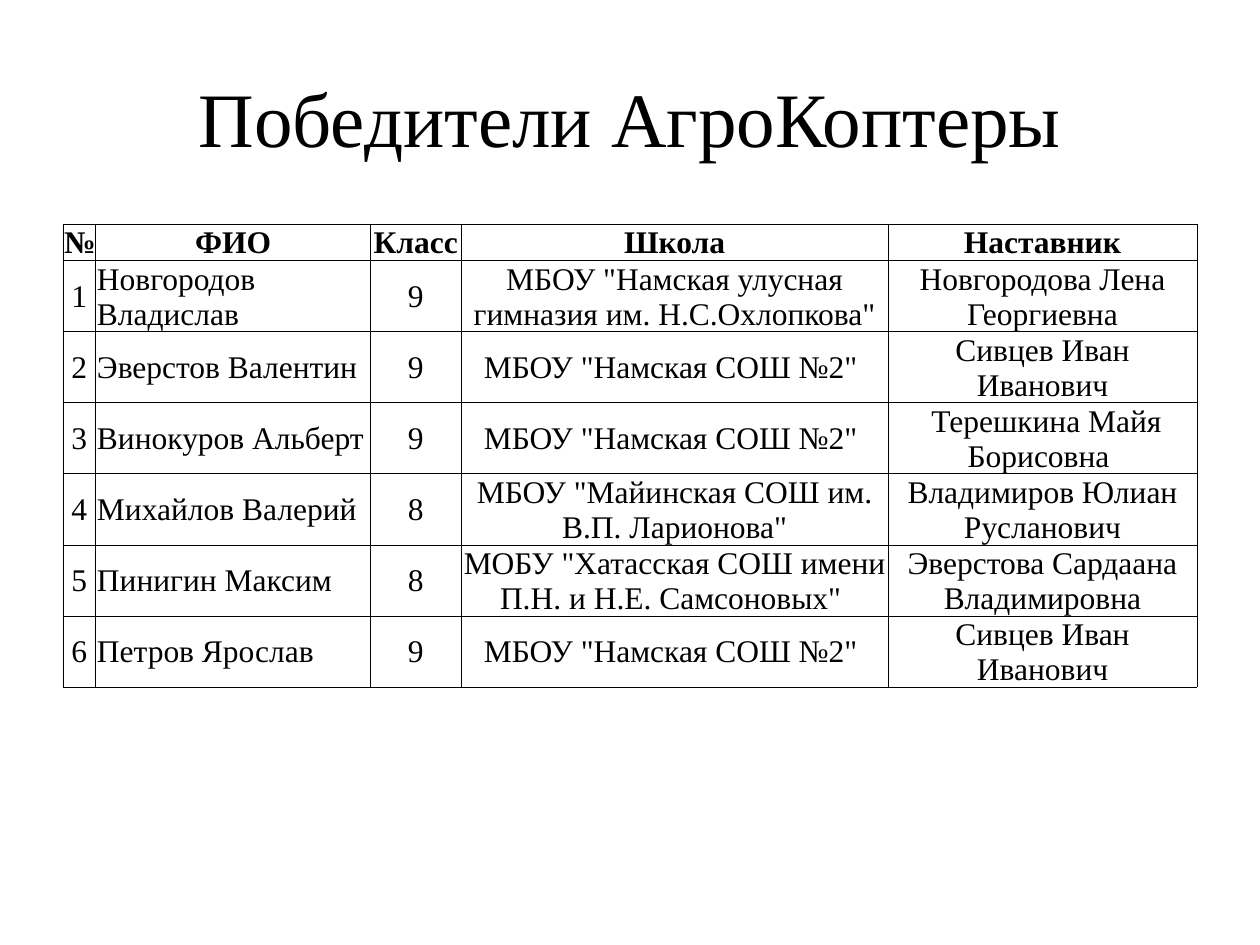
from typing import NamedTuple

from lxml import etree
from pptx import Presentation
from pptx.dml.color import RGBColor
from pptx.enum import text
from pptx.oxml.ns import qn
from pptx.util import Inches, Pt

FONT = "Times New Roman"
BLACK, WHITE = "000000", "FFFFFF"
HEADER_HEIGHT, ROW_HEIGHT = 0.29, 0.56
NAME_COLUMN, MENTOR_COLUMN = 1, 4


class Column(NamedTuple):
    heading: str
    width: float


class Winner(NamedTuple):
    name: str
    grade: int
    school: str
    mentor: str


COLUMNS = [
    Column("№", 0.26),
    Column("ФИО", 2.18),
    Column("Класс", 0.72),
    Column("Школа", 3.39),
    Column("Наставник", 2.45),
]
SCHOOL_2 = 'МБОУ "Намская СОШ №2" '
WINNERS = [
    Winner("Новгородов Владислав", 9,
           'МБОУ "Намская улусная гимназия им. Н.С.Охлопкова"',
           "Новгородова Лена Георгиевна"),
    Winner("Эверстов Валентин", 9, SCHOOL_2, "Сивцев Иван Иванович"),
    Winner("Винокуров Альберт", 9, SCHOOL_2, " Терешкина Майя Борисовна "),
    Winner("Михайлов Валерий", 8, 'МБОУ "Майинская СОШ им. В.П. Ларионова"',
           "Владимиров Юлиан Русланович"),
    Winner("Пинигин Максим", 8,
           'МОБУ "Хатасская СОШ имени П.Н. и Н.Е. Самсоновых" ',
           "Эверстова Сардаана Владимировна"),
    Winner("Петров Ярослав", 9, SCHOOL_2, "Сивцев Иван Иванович"),
]


def color(value: str) -> RGBColor:
    return RGBColor.from_string(value)


def write(frame, words: str, size: int, bold: bool = False,
          align=text.PP_ALIGN.CENTER) -> None:
    para = frame.paragraphs[0]
    para.alignment = align
    span = para.add_run()
    span.text = words
    span.font.name = FONT
    span.font.size = Pt(size)
    span.font.bold = bold
    span.font.color.rgb = color(BLACK)


def add_borders(cell) -> None:
    """Draw thin black lines on all four sides; they must precede the fill."""
    properties = cell._tc.get_or_add_tcPr()
    for index, side in enumerate(("a:lnL", "a:lnR", "a:lnT", "a:lnB")):
        line = etree.Element(qn(side), w=str(Pt(0.5)))
        fill = etree.SubElement(line, qn("a:solidFill"))
        etree.SubElement(fill, qn("a:srgbClr"), val=BLACK)
        properties.insert(index, line)


def format_cell(cell, words: str, header: bool, column: int) -> None:
    cell.margin_left = cell.margin_right = cell.margin_top = Inches(0.01)
    cell.margin_bottom = 0
    top = column == MENTOR_COLUMN and not header
    cell.vertical_anchor = text.MSO_ANCHOR.TOP if top else text.MSO_ANCHOR.MIDDLE
    cell.fill.solid()
    cell.fill.fore_color.rgb = color(WHITE)
    add_borders(cell)
    left = column == NAME_COLUMN and not header
    align = text.PP_ALIGN.LEFT if left else text.PP_ALIGN.CENTER
    write(cell.text_frame, words, 18, header, align)


def add_winners_table(slide) -> None:
    rows = [[column.heading for column in COLUMNS]]
    rows += [[str(number), *map(str, winner)]
             for number, winner in enumerate(WINNERS, 1)]
    height = HEADER_HEIGHT + ROW_HEIGHT * len(WINNERS)
    table = slide.shapes.add_table(
        len(rows), len(COLUMNS), Inches(0.5), Inches(1.78), Inches(9),
        Inches(height)).table
    table.horz_banding = False
    for grid_column, column in zip(table.columns, COLUMNS):
        grid_column.width = Inches(column.width)
    for r, row in enumerate(rows):
        table.rows[r].height = Inches(ROW_HEIGHT if r else HEADER_HEIGHT)
        for c, words in enumerate(row):
            format_cell(table.cell(r, c), words, r == 0, c)


def main() -> None:
    deck = Presentation()
    deck.slide_width, deck.slide_height = Inches(10), Inches(7.5)
    slide = deck.slides.add_slide(deck.slide_layouts[5])
    title = slide.shapes.title
    title.left, title.top = Inches(0.5), Inches(0.3)
    title.width, title.height = Inches(9), Inches(1.25)
    title.text_frame.vertical_anchor = text.MSO_ANCHOR.MIDDLE
    write(title.text_frame, "Победители АгроКоптеры", 44)
    add_winners_table(slide)
    deck.save("out.pptx")


if __name__ == "__main__":
    main()
